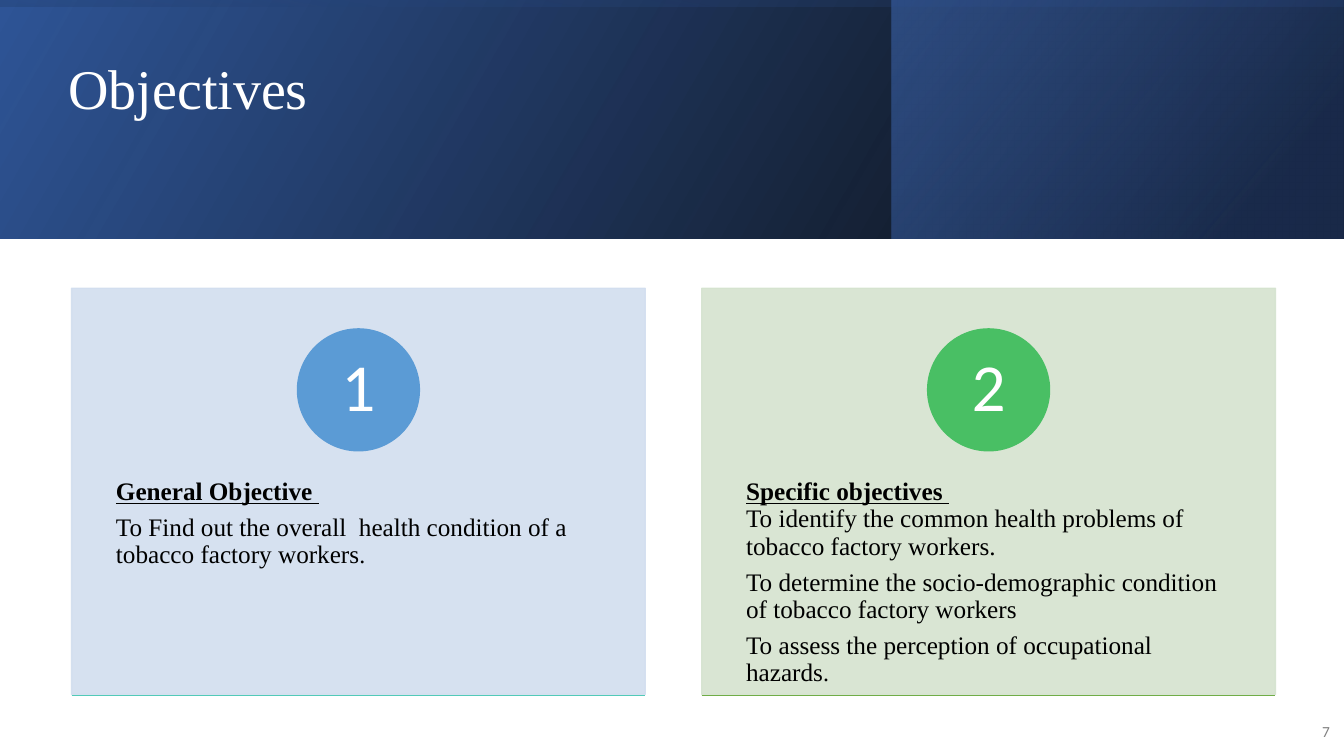
from copy import deepcopy

from lxml import etree
from pptx import Presentation
from pptx import util as u
from pptx.dml.color import RGBColor
from pptx.enum import shapes, text
from pptx.oxml import parse_xml
from pptx.oxml.ns import nsdecls, qn

WIDTH, HEIGHT = 13.33, 7.5
SERIF, SANS = "Times New Roman", "Calibri"
BAND_HEIGHT = 2.37
CARD_TOP, CARD_WIDTH, CARD_HEIGHT = 2.86, 5.69, 4.03
CARD_LEFT, CARD_PITCH = 0.71, 6.25

BAND_LAYERS = [
    ((0, 0, WIDTH, BAND_HEIGHT), 0, 330, [(0, "000000", 96), (100, "2F5597", 100)]),
    ((8.84, 0, 4.48, BAND_HEIGHT), 0, 320, [(19, "203864", 68), (100, "4472C4", 48)]),
    ((5.48, -5.48, BAND_HEIGHT, WIDTH), 270, 350, [(23, "2F5597", 16), (99, "000000", 45)]),
]

CARDS = [
    ("1", "D2DEEF", "5B9BD5", "52CAB8", [
        "General Objective ",
        "To Find out the overall  health condition of a tobacco factory workers",
    ]),
    ("2", "D5E3CF", "49BF64", "70AD47", [
        "Specific objectives \vTo identify the common health problems of tobacco factory workers.",
        "To determine the socio-demographic condition of tobacco factory workers",
        "To assess the perception of occupational hazards",
    ]),
]


def color(hex_value):
    return RGBColor.from_string(hex_value)


def place(shape, box):
    shape.left, shape.top, shape.width, shape.height = [u.Inches(value) for value in box]


def add_filled(slide, kind, box, hex_value, opacity=100):
    shape = slide.shapes.add_shape(kind, *[u.Inches(value) for value in box])
    shape.shadow.inherit = False
    shape.line.width = u.Pt(1)
    for fill in (shape.fill, shape.line.fill):
        fill.solid()
        fill.fore_color.rgb = color(hex_value)
    if opacity < 100:
        for solid in shape.element.spPr.iter(qn("a:solidFill")):
            etree.SubElement(solid[0], qn("a:alpha"), val=str(opacity * 1000))
    return shape


def style_run(run, size, font, hex_value, bold=False):
    run.font.size = u.Pt(size)
    run.font.name = font
    run.font.color.rgb = color(hex_value)
    run.font.bold = bold
    run.font.underline = bold


def style_breaks(paragraph):
    for line_break in paragraph._p.findall(qn("a:br")):
        line_break.append(deepcopy(paragraph.runs[0]._r.rPr))


def set_frame(frame, anchor, horizontal=0.1, vertical=0.05):
    frame.word_wrap = True
    frame.auto_size = text.MSO_AUTO_SIZE.NONE
    frame.vertical_anchor = anchor
    frame.margin_left = frame.margin_right = u.Inches(horizontal)
    frame.margin_top = frame.margin_bottom = u.Inches(vertical)


def bring_forward(placeholder):
    placeholder.element.getparent().append(placeholder.element)


def build_header(slide):
    for box, rotation, angle, stops in BAND_LAYERS:
        layer = add_filled(slide, shapes.MSO_SHAPE.RECTANGLE, box, stops[0][1])
        layer.line.fill.background()
        layer.rotation = rotation
        properties = layer.element.spPr
        properties.xfrm.set("flipH", "1")
        stop_xml = "".join(
            f'<a:gs pos="{position * 1000}"><a:srgbClr val="{hex_value}">'
            f'<a:alpha val="{opacity * 1000}"/></a:srgbClr></a:gs>'
            for position, hex_value, opacity in stops
        )
        gradient = parse_xml(
            f'<a:gradFill {nsdecls("a")} rotWithShape="1"><a:gsLst>{stop_xml}</a:gsLst>'
            f'<a:lin ang="{angle * 60000}" scaled="0"/></a:gradFill>'
        )
        properties.replace(properties.find(qn("a:solidFill")), gradient)

    title = slide.shapes.title
    place(title, (0.58, 0.38, 11.56, 1.72))
    bring_forward(title)
    set_frame(title.text_frame, text.MSO_ANCHOR.MIDDLE)
    title.text_frame.text = "Objectives \v"
    paragraph = title.text_frame.paragraphs[0]
    paragraph.alignment = text.PP_ALIGN.LEFT
    paragraph.line_spacing = 0.9
    style_run(paragraph.runs[0], 40, SERIF, "FFFFFF")
    style_breaks(paragraph)


def build_card_text(body, lines, box):
    place(body, box)
    bring_forward(body)
    frame = body.text_frame
    set_frame(frame, text.MSO_ANCHOR.TOP, 0.44, 0.36)
    frame.text = "\n".join(lines)
    for paragraph in frame.paragraphs:
        paragraph.line_spacing = 0.9
        paragraph.space_before = u.Pt(0)
        paragraph.space_after = u.Pt(6.3)
        properties = paragraph._p.get_or_add_pPr()
        properties.set("marL", "0")
        properties.set("indent", "0")
        etree.SubElement(properties, qn("a:buNone"))
        for run in paragraph.runs:
            style_run(run, 18, SERIF, "000000")
    heading = frame.paragraphs[0]
    style_run(heading.runs[0], 18, SERIF, "000000", bold=True)
    style_breaks(heading)
    period = frame.paragraphs[-1].add_run()
    period.text = "."
    style_run(period, 17, SERIF, "000000")


def build_card(slide, body, card, box):
    number, panel_color, circle_color, edge_color, lines = card
    left, top, width, height = box
    add_filled(slide, shapes.MSO_SHAPE.RECTANGLE, box, panel_color, 90)
    build_card_text(body, lines, (left, top + 0.38 * height, width, 0.6 * height))

    diameter = 0.3 * height
    circle_box = (left + (width - diameter) / 2, top + 0.1 * height, diameter, diameter)
    circle = add_filled(slide, shapes.MSO_SHAPE.OVAL, circle_box, circle_color)
    set_frame(circle.text_frame, text.MSO_ANCHOR.MIDDLE, 0.09, 0.01)
    circle.text_frame.text = number
    paragraph = circle.text_frame.paragraphs[0]
    paragraph.alignment = text.PP_ALIGN.CENTER
    paragraph.line_spacing = 0.9
    style_run(paragraph.runs[0], 48, SANS, "FFFFFF")

    bottom = u.Inches(top + height + 0.01)
    edge = slide.shapes.add_connector(
        shapes.MSO_CONNECTOR.STRAIGHT, u.Inches(left), bottom, u.Inches(left + width), bottom
    )
    edge.line.color.rgb = color(edge_color)
    edge.line.width = u.Pt(1)
    etree.SubElement(edge.element.spPr, qn("a:effectLst"))


def build_page_number(slide, box):
    number = slide.shapes.add_textbox(*[u.Inches(value) for value in box])
    set_frame(number.text_frame, text.MSO_ANCHOR.MIDDLE)
    number.text_frame.text = "7"
    paragraph = number.text_frame.paragraphs[0]
    paragraph.alignment = text.PP_ALIGN.RIGHT
    paragraph.space_after = u.Pt(6)
    style_run(paragraph.runs[0], 11, SANS, "808080")


def main():
    presentation = Presentation()
    presentation.slide_width = u.Inches(WIDTH)
    presentation.slide_height = u.Inches(HEIGHT)
    slide = presentation.slides.add_slide(presentation.slide_layouts.get_by_name("Two Content"))
    bodies = list(slide.placeholders)[1:]
    build_header(slide)
    for column, (body, card) in enumerate(zip(bodies, CARDS)):
        left = CARD_LEFT + column * CARD_PITCH
        build_card(slide, body, card, (left, CARD_TOP, CARD_WIDTH, CARD_HEIGHT))
    build_page_number(slide, (12.8, 7.06, 0.49, 0.4))
    presentation.save("out.pptx")


if __name__ == "__main__":
    main()
